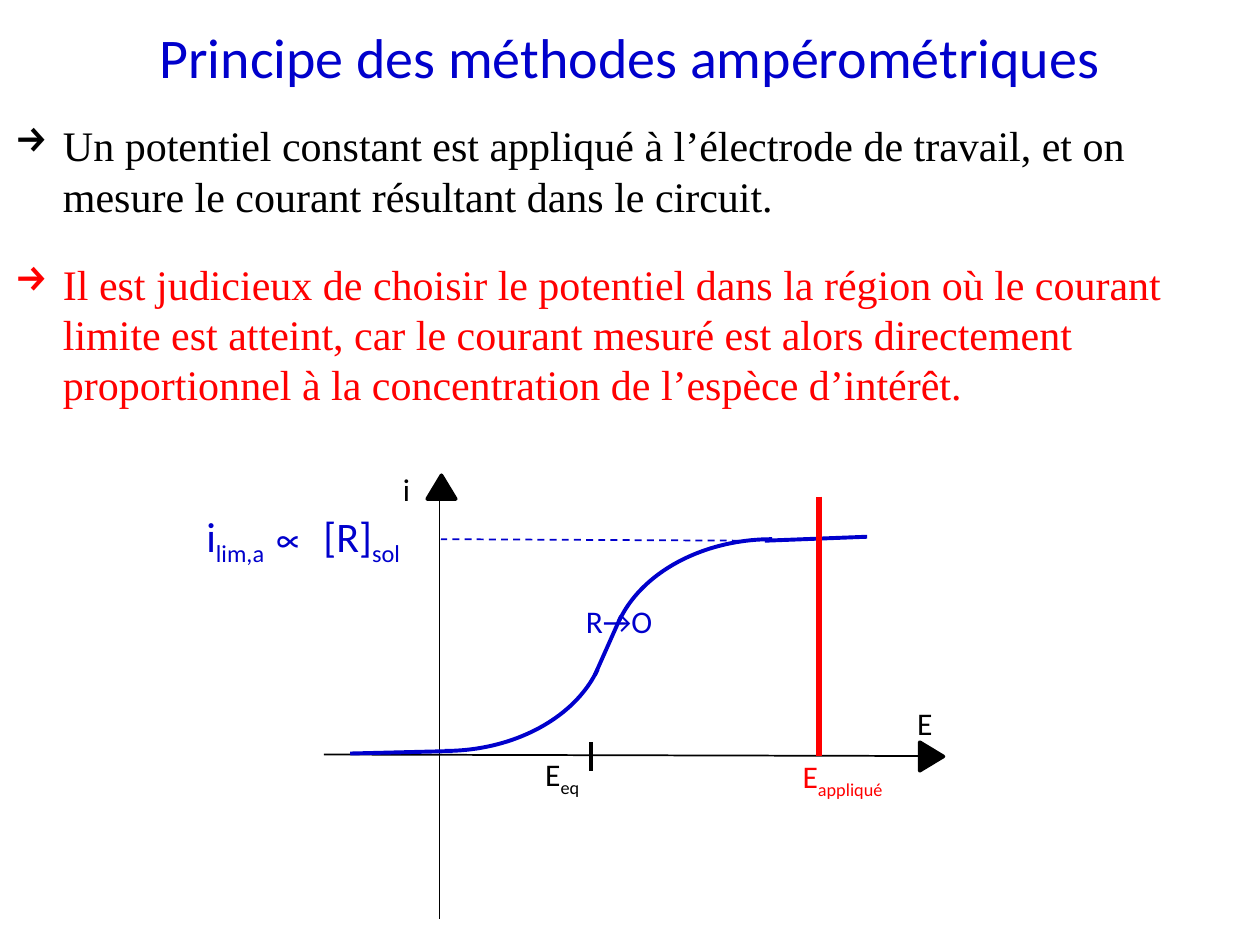
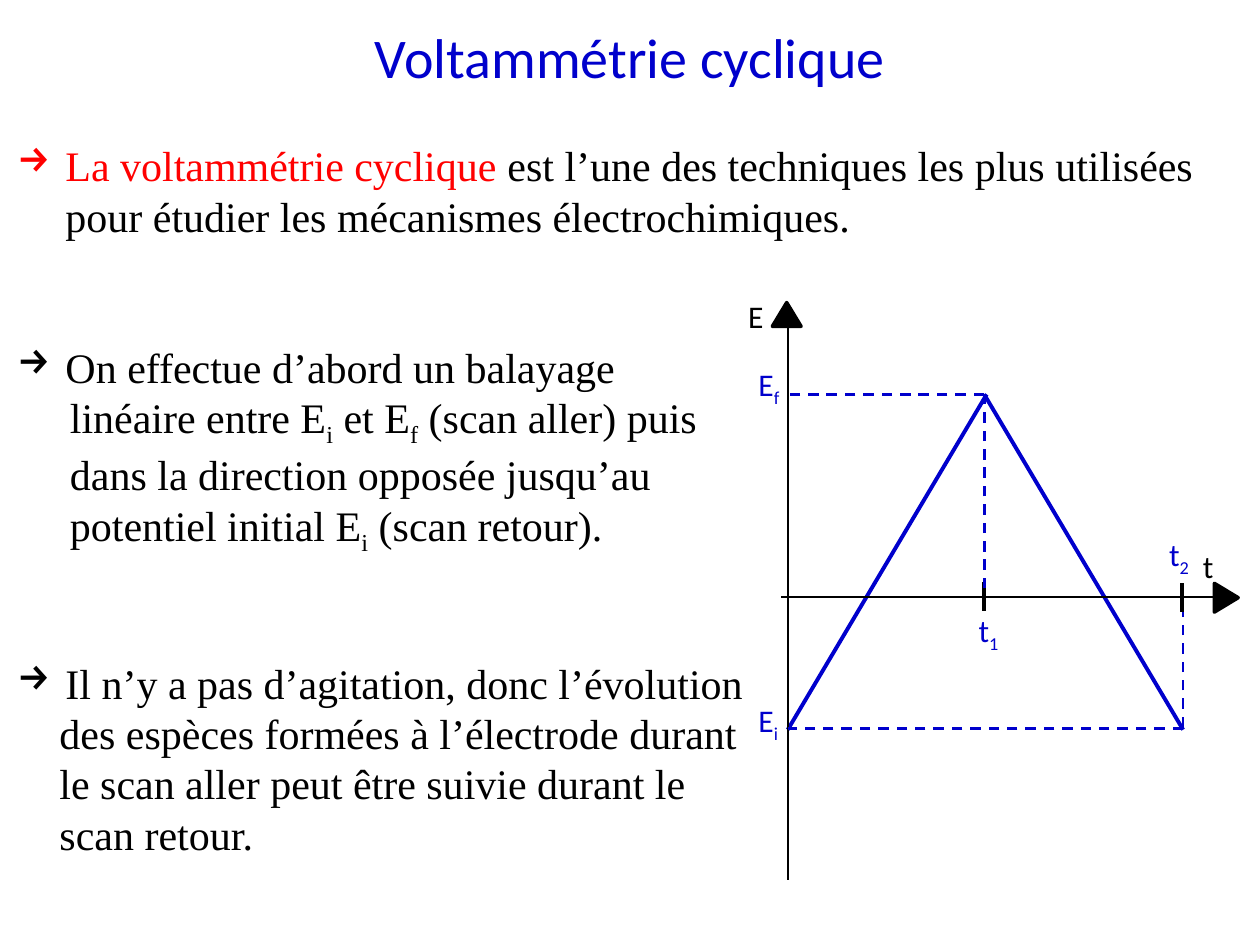
"""Build two slides on amperometric methods and cyclic voltammetry."""
from typing import NamedTuple

from lxml import etree
from pptx import Presentation
from pptx import util as u
from pptx.dml.color import RGBColor
from pptx.enum import dml, shapes, text
from pptx.oxml import ns

BLUE, RED, BLACK = "0000CC", "FF0000", "000000"
SANS, SERIF = "Calibri", "Times New Roman"
LABEL_HEIGHT = 1.02
HANGING = 0.97


class Span(NamedTuple):
    words: str
    lowered: bool = False
    color: str | None = None
    font: str | None = None


class Para(NamedTuple):
    spans: list[Span]
    color: str = BLACK
    bullet: bool = True
    left: float = HANGING
    before: float = 0


class Label(NamedTuple):
    left: float
    top: float
    width: float
    base: str
    index: str = ""
    color: str = BLACK
    wrap: bool = True


class Line(NamedTuple):
    x1: float
    y1: float
    x2: float
    y2: float
    color: str = BLACK
    weight: float = 1
    dashed: bool = False


class Arrowhead(NamedTuple):
    left: float
    top: float
    rotation: float = 0


class Bend(NamedTuple):
    left: float
    top: float
    rotation: float = 0


def rgb(value: str) -> RGBColor:
    """Turn a hex string into a colour."""
    return RGBColor.from_string(value)


def add_box(page, left: float, top: float, width: float, height: float, wrap: bool = True):
    """Add a text box that grows with its text."""
    box = page.shapes.add_textbox(u.Cm(left), u.Cm(top), u.Cm(width), u.Cm(height))
    box.text_frame.word_wrap = wrap
    box.text_frame.auto_size = text.MSO_AUTO_SIZE.SHAPE_TO_FIT_TEXT
    return box


def add_spans(para, spans: list[Span], size: float, font: str, color: str) -> None:
    """Write formatted spans, some of them as subscripts."""
    for item in spans:
        span = para.add_run()
        span.text = item.words
        span.font.size = u.Pt(size)
        span.font.name = item.font or font
        span.font.color.rgb = rgb(item.color or color)
        if item.lowered:
            span._r.get_or_add_rPr().set("baseline", "-25000")


def add_title(page, words: str) -> None:
    """Write the centred slide title."""
    para = add_box(page, 0, 0.33, 25.4, 1.63).text_frame.paragraphs[0]
    para.alignment = text.PP_ALIGN.CENTER
    add_spans(para, [Span(words)], 32, SANS, BLUE)


def add_body(page, left: float, top: float, height: float, paras: list[Para]) -> None:
    """Write the body paragraphs with arrow bullets or plain indents."""
    frame = add_box(page, left, top, 25.4, height).text_frame
    for number, item in enumerate(paras):
        para = frame.add_paragraph() if number else frame.paragraphs[0]
        para.space_before = u.Pt(item.before)
        properties = para._p.get_or_add_pPr()
        properties.set("marL", str(u.Cm(item.left)))
        if item.bullet:
            properties.set("indent", str(-u.Cm(item.left)))
            etree.SubElement(properties, ns.qn("a:buChar")).set("char", "→")
        add_spans(para, item.spans, 24, SERIF, item.color)


def add_label(page, label: Label) -> None:
    """Write a graph label with an optional index."""
    box = add_box(page, label.left, label.top, label.width, LABEL_HEIGHT, label.wrap)
    spans = [Span(label.base)]
    if label.index:
        spans.append(Span(label.index, lowered=True))
    add_spans(box.text_frame.paragraphs[0], spans, 18, SANS, label.color)


def add_line(page, line: Line) -> None:
    """Draw a straight line."""
    ends = [u.Cm(value) for value in line[:4]]
    connector = page.shapes.add_connector(shapes.MSO_CONNECTOR.STRAIGHT, *ends)
    connector.line.color.rgb = rgb(line.color)
    connector.line.width = u.Pt(line.weight)
    if line.dashed:
        connector.line.dash_style = dml.MSO_LINE.DASH
    etree.SubElement(connector._element.spPr, ns.qn("a:effectLst"))


def add_arrowhead(page, head: Arrowhead) -> None:
    """Draw the black triangle at the end of an axis."""
    shape = page.shapes.add_shape(
        shapes.MSO_SHAPE.ISOSCELES_TRIANGLE,
        u.Cm(head.left), u.Cm(head.top), u.Cm(0.58), u.Cm(0.48))
    shape.shadow.inherit = False
    shape.rotation = head.rotation
    shape.fill.solid()
    shape.fill.fore_color.rgb = rgb(BLACK)
    shape.line.color.rgb = rgb(BLACK)
    shape.line.width = u.Pt(2)


def add_bend(page, bend: Bend) -> None:
    """Draw one curved part of the current wave."""
    shape = page.shapes.add_shape(
        shapes.MSO_SHAPE.ARC, u.Cm(bend.left), u.Cm(bend.top), u.Cm(6.55), u.Cm(4.95))
    shape.shadow.inherit = False
    shape.adjustments[0], shape.adjustments[1] = 162, 206.95
    shape.rotation = bend.rotation
    shape._element.spPr.xfrm.set("flipV", "1")
    shape.fill.background()
    shape.line.color.rgb = rgb(BLUE)
    shape.line.width = u.Pt(2.25)


DRAWERS = {Line: add_line, Arrowhead: add_arrowhead, Bend: add_bend, Label: add_label}


def draw(page, items: list) -> None:
    """Draw graph parts from back to front."""
    for item in items:
        DRAWERS[type(item)](page, item)


def build_amperometry(page) -> None:
    """Build the slide on the principle of amperometric methods."""
    add_title(page, "Principe des méthodes ampérométriques")
    draw(page, [
        Line(6.53, 15.21, 18.59, 15.24),
        Line(8.86, 10.01, 8.86, 18.52),
        Arrowhead(8.61, 9.58),
        Arrowhead(18.49, 15.01, 90),
        Line(11.91, 14.96, 11.91, 15.54, weight=2),
        Label(10.74, 15.09, 2.01, "E", "eq"),
        Label(18.24, 14.07, 1.5, "E"),
        Label(7.87, 9.35, 0.99, "i"),
        Label(11.56, 12.01, 5.79, "R→O", color=BLUE),
        Line(15.42, 10.9, 17.48, 10.82, BLUE, 2.25),
        Bend(12.29, 10.87, 180),
        Bend(5.69, 10.19),
        Line(11.99, 13.61, 12.52, 12.42, BLUE, 2.25),
        Line(7.06, 15.19, 9.12, 15.14, BLUE, 2.25),
        Line(15.14, 10.9, 8.89, 10.87, BLUE, 1, True),
    ])
    law = add_box(page, 3.91, 10.16, 5.21, 1.27)
    add_spans(law.text_frame.paragraphs[0], [
        Span("i"), Span("lim,a ", True), Span("∝ ", font="Arial"),
        Span("[R]"), Span("sol", True)], 24, SANS, BLUE)
    add_body(page, 0.05, 2.29, 7.77, [
        Para([Span("Un potentiel constant est appliqué à l’électrode de travail, et on "
                   "mesure le courant résultant dans le circuit.")]),
        Para([Span("Il est judicieux de choisir le potentiel dans la région où le courant "
                   "limite est atteint, car le courant mesuré est alors directement "
                   "proportionnel à la concentration de l’espèce d’intérêt.")],
             RED, before=21.5),
    ])
    draw(page, [
        Line(16.51, 10.01, 16.51, 15.24, RED, 3),
        Label(15.93, 15.14, 2.72, "E", "appliqué", RED),
    ])


def build_voltammetry(page) -> None:
    """Build the slide on cyclic voltammetry."""
    start, peak, end = 15.88, 19.84, 23.85
    low, zero, high = 14.71, 12.04, 7.95
    gap, scan, stir = 57.5, 1.06, 0.85
    add_body(page, 0.1, 2.69, 16.26, [
        Para([Span("La voltammétrie cyclique ", color=RED),
              Span("est l’une des techniques les plus utilisées "
                   "pour étudier les mécanismes électrochimiques.")]),
        Para([Span("On effectue d’abord un balayage")], before=gap),
        Para([Span("linéaire entre E"), Span("i", True), Span(" et E"), Span("f", True),
              Span(" (scan aller) puis")], bullet=False, left=scan),
        Para([Span("dans la direction opposée jusqu’au")], bullet=False, left=scan),
        Para([Span("potentiel initial E"), Span("i", True), Span(" (scan retour).")],
             bullet=False, left=scan),
        Para([Span("Il n’y a pas d’agitation, donc l’évolution")], before=gap),
        *(Para([Span(words)], bullet=False, left=stir) for words in (
            "des espèces formées à l’électrode durant",
            "le scan aller peut être suivie durant le",
            "scan retour.")),
    ])
    add_title(page, "Voltammétrie cyclique")
    draw(page, [
        Arrowhead(15.57, 6.1),
        Label(14.83, 5.87, 0.99, "E"),
        Label(24, 10.9, 1.5, "t"),
        Arrowhead(24.43, 11.81, 90),
        Line(start, low, peak + 0.05, high, BLUE, 2.25),
        Line(peak, high, end, low, BLUE, 2.25),
        Line(15.75, zero, 24.49, zero),
        Line(start, 6.4, start, 17.73),
        Line(peak, 11.73, peak, 12.32, weight=2),
        Line(peak, 11.86, peak, 7.9, BLUE, 1.5, True),
        Line(peak, high, start, high, BLUE, 1.5, True),
        Label(15.04, 7.24, 2.06, "E", "f", BLUE),
        Label(19.48, 12.19, 1.07, "t", "1", BLUE),
        Line(end, 14.68, start, 14.68, BLUE, 1.5, True),
        Label(15.04, 14, 2.06, "E", "i", BLUE),
        Line(end, 14.66, end, zero, BLUE, 1.5, True),
        Label(23.32, 10.67, 0.94, "t", "2", BLUE, False),
        Line(23.83, 11.76, 23.83, 12.34, weight=2),
    ])


def main() -> None:
    """Create and save the deck."""
    deck = Presentation()
    deck.slide_width, deck.slide_height = u.Cm(25.4), u.Cm(19.05)
    for build in (build_amperometry, build_voltammetry):
        build(deck.slides.add_slide(deck.slide_layouts[6]))
    deck.save("out.pptx")


if __name__ == "__main__":
    main()
